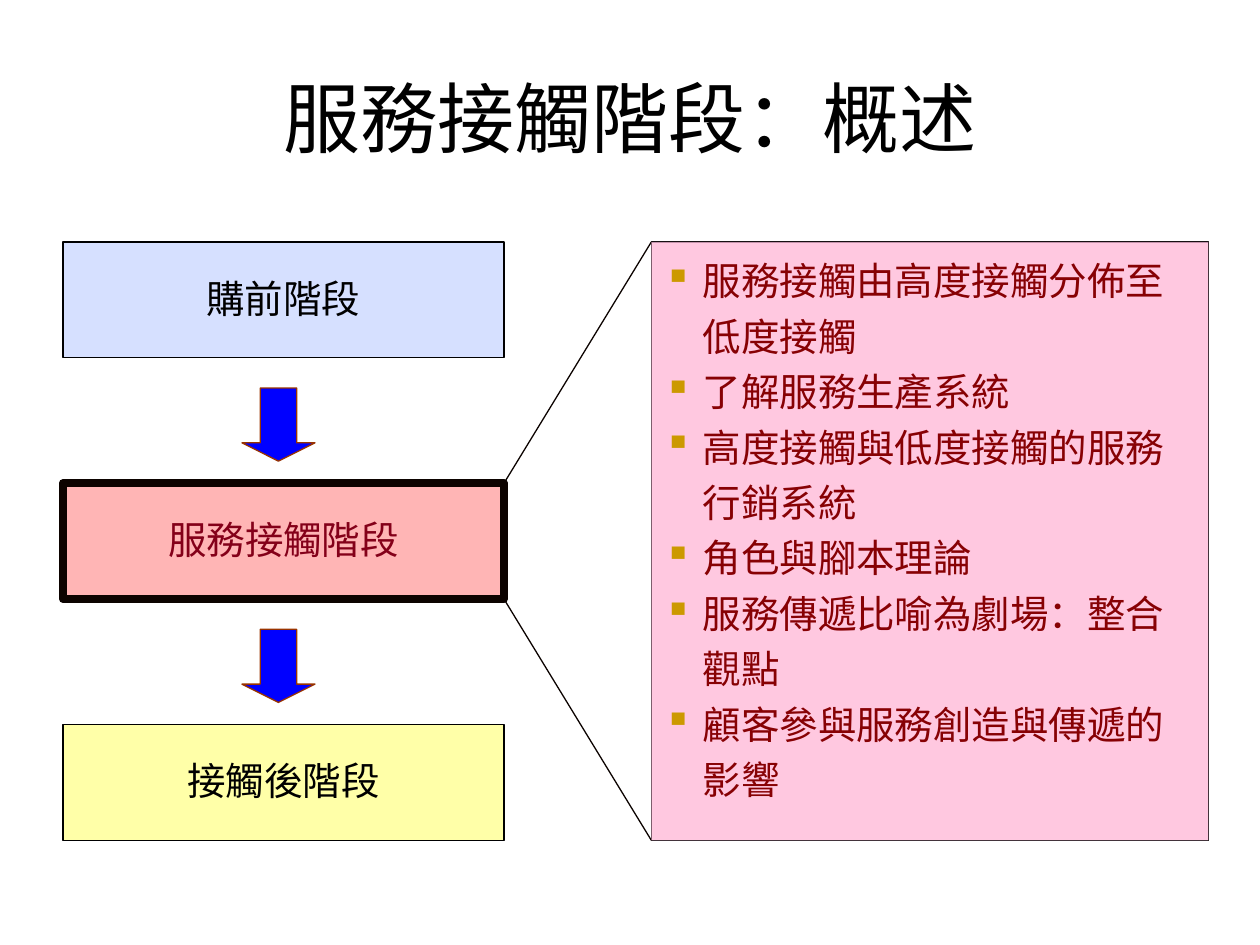
from lxml.etree import SubElement
from pptx import Presentation
from pptx.dml.color import RGBColor
from pptx.enum.shapes import MSO_CONNECTOR, MSO_SHAPE
from pptx.enum.text import MSO_ANCHOR, PP_ALIGN
from pptx.oxml.ns import qn
from pptx.util import Inches, Pt

BLACK = RGBColor(0x00, 0x00, 0x00)
INK = RGBColor(0x0C, 0x03, 0x00)
BLUE = RGBColor(0x33, 0x66, 0xFF)
RED = RGBColor(0xFF, 0x00, 0x00)
YELLOW = RGBColor(0xFF, 0xFF, 0x99)
WINE = RGBColor(0x84, 0x00, 0x19)
ARROW = RGBColor(0x00, 0x00, 0xFF)
RUST = RGBColor(0x99, 0x33, 0x00)
SALMON = RGBColor(0xFF, 0x99, 0x99)
PINK = RGBColor(0xFF, 0xC1, 0xE0)
MAROON = RGBColor(0x87, 0x01, 0x04)
GOLD = RGBColor(0xCC, 0x99, 0x00)

TITLE = "服務接觸階段：概述"
# text, fill, opacity in percent, line colour, line width, text colour
STAGES = [
    ("購前階段", BLUE, 20, BLACK, 0.75, BLACK),
    ("服務接觸階段", RED, 29, INK, 4.5, WINE),
    ("接觸後階段", YELLOW, 85, BLACK, 0.75, BLACK),
]
POINTS = [
    "服務接觸由高度接觸分佈至低度接觸",
    "了解服務生產系統",
    "高度接觸與低度接觸的服務行銷系統",
    "角色與腳本理論",
    "服務傳遞比喻為劇場：整合觀點",
    "顧客參與服務創造與傳遞的影響",
]

# Inches
LEFT, TOP, BOTTOM = 0.5, 1.92, 6.67
BOX_W, BOX_H = 3.5, 0.92
STEP = (BOTTOM - TOP - BOX_H) / (len(STAGES) - 1)
ARROW_X, ARROW_DY, ARROW_S = 1.92, 1.16, 0.58
PANEL_X, PANEL_W = 5.17, 4.42
INDENT = 0.31

prs = Presentation()
prs.slide_width, prs.slide_height = Inches(10), Inches(7.5)
slide = prs.slides.add_slide(prs.slide_layouts[6])
shapes = slide.shapes


def add_block(kind, x, y, w, h, fill, alpha=100, line=None, width=0.75):
    block = shapes.add_shape(kind, *map(Inches, (x, y, w, h)))
    block.shadow.inherit = False
    block.fill.solid()
    block.fill.fore_color.rgb = fill
    if alpha < 100:
        color = block.fill._xPr.find(qn("a:solidFill"))[0]
        SubElement(color, qn("a:alpha"), val=str(alpha * 1000))
    if line is None:
        block.line.fill.background()
    else:
        block.line.color.rgb = line
        block.line.width = Pt(width)
    return block


def add_text(para, text, size, color, font="Calibri"):
    run = para.add_run()
    run.text = text
    run.font.size = Pt(size)
    run.font.name = font
    run.font.color.rgb = color


def add_bullet(para):
    props = para._p.get_or_add_pPr()
    props.set("marL", str(Inches(INDENT)))
    props.set("indent", str(-Inches(INDENT)))
    color = SubElement(props, qn("a:buClr"))
    SubElement(color, qn("a:srgbClr"), val=str(GOLD))
    SubElement(props, qn("a:buChar"), char="▪")


def add_line(x1, y1, x2, y2):
    line = shapes.add_connector(
        MSO_CONNECTOR.STRAIGHT, *map(Inches, (x1, y1, x2, y2)))
    line.line.color.rgb = INK
    line.line.width = Pt(0.75)
    SubElement(line._element.spPr, qn("a:effectLst"))


head = shapes.add_textbox(*map(Inches, (LEFT, 0.3, 9, 1.25))).text_frame
head.word_wrap = True
head.vertical_anchor = MSO_ANCHOR.MIDDLE
head.paragraphs[0].alignment = PP_ALIGN.CENTER
add_text(head.paragraphs[0], TITLE, 44, BLACK, "Noto Sans CJK SC")

for i, (text, fill, alpha, line, width, color) in enumerate(STAGES):
    box = add_block(MSO_SHAPE.RECTANGLE, LEFT, TOP + i * STEP, BOX_W, BOX_H,
                    fill, alpha, line, width)
    frame = box.text_frame
    frame.word_wrap = False
    frame.vertical_anchor = MSO_ANCHOR.MIDDLE
    para = frame.paragraphs[0]
    para.alignment = PP_ALIGN.CENTER
    para.line_spacing = 0.95
    add_text(para, text, 22, color)

for i in range(len(STAGES) - 1):
    arrow = add_block(MSO_SHAPE.DOWN_ARROW, ARROW_X, TOP + ARROW_DY + i * STEP,
                      ARROW_S, ARROW_S, ARROW, line=RUST)
    arrow.adjustments[0], arrow.adjustments[1] = 0.5, 0.25

panel = (MSO_SHAPE.RECTANGLE, PANEL_X, TOP, PANEL_W, BOTTOM - TOP)
add_block(*panel, SALMON, 29, BLACK)
mid = TOP + STEP
add_line(LEFT + BOX_W, mid, PANEL_X, TOP)
add_line(LEFT + BOX_W, mid + BOX_H, PANEL_X, BOTTOM)

frame = add_block(*panel, PINK, 76).text_frame
frame.word_wrap = True
frame.vertical_anchor = MSO_ANCHOR.TOP
for i, text in enumerate(POINTS):
    para = frame.add_paragraph() if i else frame.paragraphs[0]
    para.alignment = PP_ALIGN.LEFT
    para.line_spacing = 1.2
    add_bullet(para)
    add_text(para, text, 22, MAROON)

prs.save("out.pptx")
